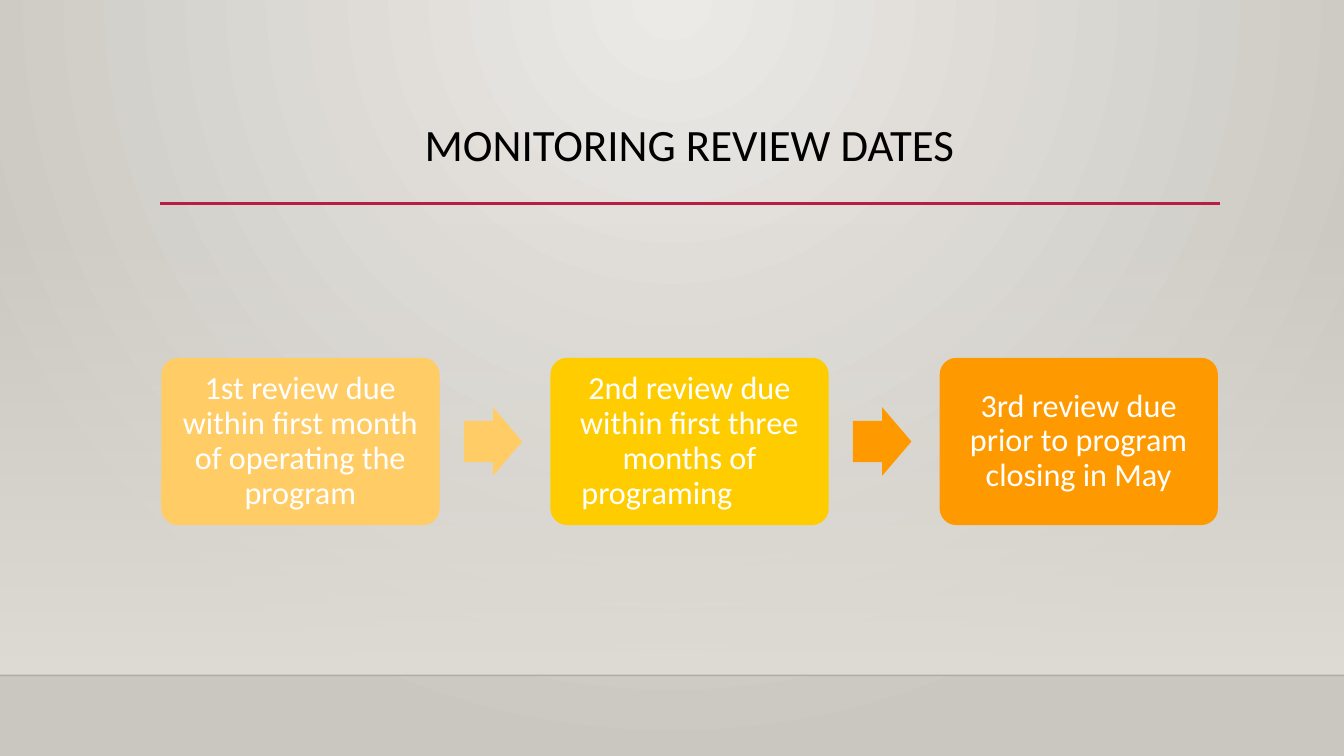
from lxml import etree
from pptx import Presentation
from pptx.dml.color import RGBColor
from pptx.enum.shapes import MSO_CONNECTOR, MSO_SHAPE
from pptx.enum.text import MSO_ANCHOR, PP_ALIGN
from pptx.oxml import parse_xml
from pptx.oxml.ns import qn
from pptx.util import Inches, Pt

RECT, ROUND, ARROW = MSO_SHAPE.RECTANGLE, MSO_SHAPE.ROUNDED_RECTANGLE, MSO_SHAPE.RIGHT_ARROW
STRAIGHT = MSO_CONNECTOR.STRAIGHT
TOP, MIDDLE = MSO_ANCHOR.TOP, MSO_ANCHOR.MIDDLE
CENTER, LEFT = PP_ALIGN.CENTER, PP_ALIGN.LEFT

# Content
TITLE = "MONITORING REVIEW DATES"
STEPS = [
    (["1st review due within first month of operating the program"], "peach"),
    (["2nd review due within first three months of", "programing"], "gold"),
    (["3rd review due prior to program closing in May"], "orange"),
]
LINKS = ["peach", "orange"]
COLORS = {
    "peach": "FFCC66", "gold": "FFCC00", "orange": "FF9900", "rule": "B71E42",
    "ink": "000000", "edge": "000001", "white": "FFFFFF",
    "light": "ECEAE7", "dark": "CAC7C1", "haze": "DFDBD5",
}

# Grid, in inches
WIDE, HIGH = 13.33, 7.5
SIDE, PITCH = 1.6, 3.86
BOX_W, BOX_H, BOX_Y = 2.76, 1.66, 3.55
TIP_W, TIP_H, TIP_GAP = 0.58, 0.68, 0.24
FLOOR, HAZE_Y, RULE_Y = 6.7, 2.21, 2.02

deck = Presentation()
deck.slide_width, deck.slide_height = Inches(WIDE), Inches(HIGH)
slide = deck.slides.add_slide(deck.slide_layouts[5])
shapes = slide.shapes


def color(name):
    return RGBColor.from_string(COLORS[name])


def grade(fill, first, last, shade, clear=False):
    """Set a two-stop gradient; shade is its direction element."""
    fill.gradient()
    for stop, name in zip(fill.gradient_stops, (first, last)):
        stop.color.rgb = color(name)
    grad = fill._fill._gradFill
    stops = grad.find(qn("a:gsLst"))
    for stop, pos in zip(stops, (0, 100000)):
        stop.set("pos", str(pos))
    if clear:
        etree.SubElement(stops[0][0], qn("a:alpha"), val="0")
    for old in grad.findall(qn("a:lin")):
        grad.remove(old)
    stops.addnext(parse_xml(shade.replace(
        " ", ' xmlns:a="http://schemas.openxmlformats.org/drawingml/2006/main" ', 1)))


def write(shape, text, size=23, ink="white", inset=0.1, anchor=MIDDLE, indent=0.16):
    """Centre the first paragraph and indent any that follow."""
    frame = shape.text_frame
    frame.word_wrap, frame.vertical_anchor = True, anchor
    frame.margin_left = frame.margin_right = Inches(inset)
    frame.margin_top = frame.margin_bottom = Inches(min(inset, size / 230))
    for i, line in enumerate(text):
        para = frame.add_paragraph() if i else frame.paragraphs[0]
        para.alignment = LEFT if i else CENTER
        if i:
            para._p.get_or_add_pPr().set("marL", str(Inches(indent)))
        para.line_spacing = 0.9
        para.space_before = para.space_after = Pt(0)
        run = para.add_run()
        run.text = line
        run.font.name, run.font.size = "Calibri", Pt(size)
        run.font.color.rgb = color(ink)


def add(kind, x, y, w, h, fill=None):
    shape = shapes.add_shape(kind, Inches(x), Inches(y), Inches(w), Inches(h))
    shape.shadow.inherit = False
    shape.line.fill.background()
    if fill:
        shape.fill.solid()
        shape.fill.fore_color.rgb = color(fill)
    return shape


def rule(x, end, y, ink, width, alpha=100):
    line = shapes.add_connector(STRAIGHT, Inches(x), Inches(y), Inches(end), Inches(y))
    line.line.color.rgb, line.line.width = color(ink), Pt(width)
    for tone in line._element.spPr.iter(qn("a:srgbClr")):
        etree.SubElement(tone, qn("a:alpha"), val=str(alpha * 1000))
    etree.SubElement(line._element.spPr, qn("a:effectLst"))


# Backdrop
grade(slide.background.fill, "light", "dark",
      '<a:path path="circle"><a:fillToRect l="43000" t="0" r="43000" b="100000"/></a:path>')
haze = add(RECT, 0, HAZE_Y, WIDE, FLOOR - HAZE_Y)
grade(haze.fill, "haze", "haze", '<a:lin ang="5400000" scaled="0"/>', clear=True)
rule(0, WIDE, FLOOR, "edge", 1, alpha=20)
rule(1.59, 12.1, RULE_Y, "rule", 2.5)

# Title
head = shapes.title
head.left, head.top, head.width, head.height = map(Inches, (1.59, 1.17, 10.5, 0.86))
write(head, [TITLE], size=32, ink="ink", inset=0.05, anchor=TOP)

# Steps and the arrows between them
for i, (text, fill) in enumerate(STEPS):
    x = SIDE + i * PITCH
    box = add(ROUND, x, BOX_Y, BOX_W, BOX_H, fill)
    box.adjustments[0] = 0.1
    write(box, text)
    if i < len(LINKS):
        tip = add(ARROW, x + BOX_W + TIP_GAP, BOX_Y + (BOX_H - TIP_H) / 2, TIP_W, TIP_H, LINKS[i])
        tip.adjustments[0], tip.adjustments[1] = 0.6, 0.5

deck.save("out.pptx")
